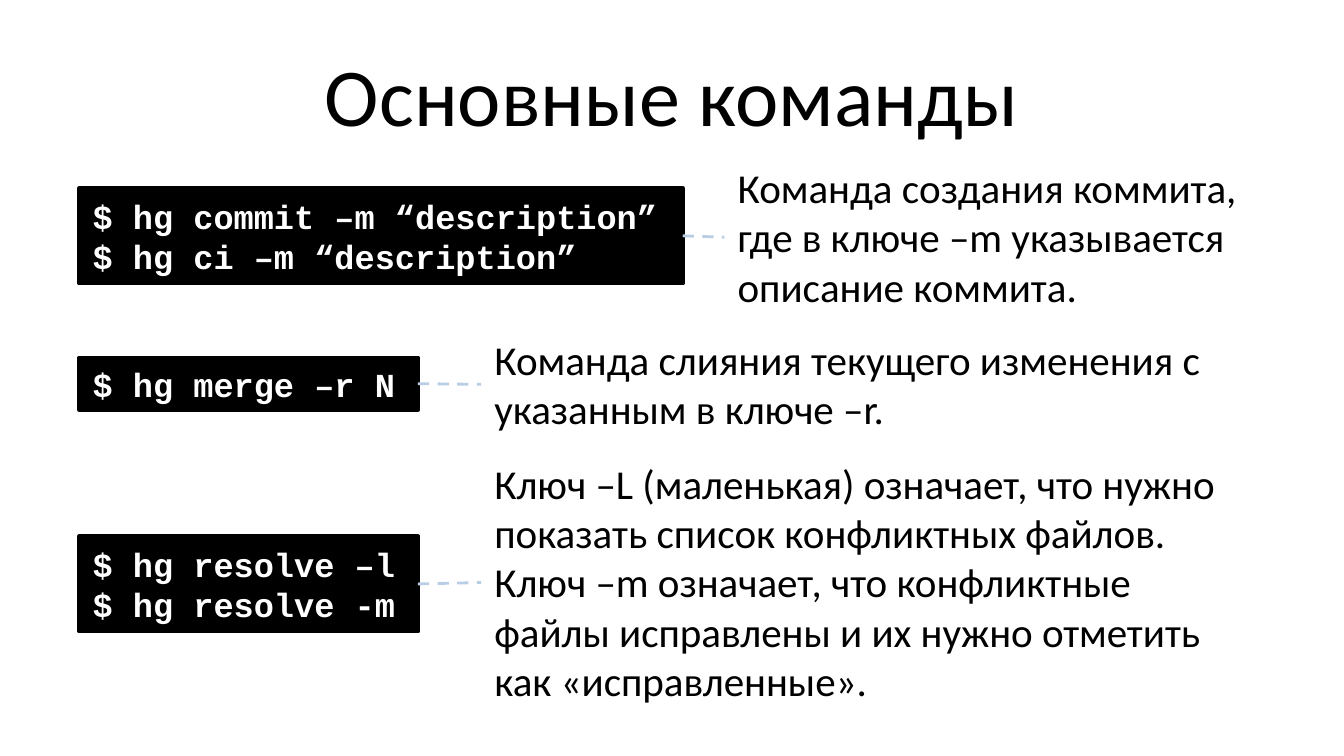
from lxml import etree
from pptx import Presentation
from pptx.dml.color import RGBColor
from pptx.enum.dml import MSO_LINE_DASH_STYLE as Dash
from pptx.enum.shapes import MSO_CONNECTOR as Connector, MSO_SHAPE as Shape
from pptx.enum.text import MSO_ANCHOR as Anchor, MSO_AUTO_SIZE as AutoSize, PP_ALIGN as Align
from pptx.oxml.ns import qn
from pptx.util import Inches, Pt

BLACK = RGBColor(0x00, 0x00, 0x00)
WHITE = RGBColor(0xFF, 0xFF, 0xFF)
PALE_BLUE = RGBColor(0xB9, 0xCD, 0xE5)
RIGHT_SIDE, LEFT_SIDE = 3, 1
PAGE_WIDTH = 10
PAGE_HEIGHT = PAGE_WIDTH * 9 / 16
CODE_LEFT = 0.59

# Code box (top, width, height), note box (left, top, width, height), texts
COMMANDS = [
    ((2.66, 2.52, 0.39), (3.58, 2.44, 5.95, 0.84),
     ["$ hg merge –r N"],
     ["Команда слияния текущего изменения с указанным в ключе –r."]),
    ((3.99, 2.52, 0.71), (3.58, 3.36, 5.59, 1.95),
     ["$ hg resolve –l", "$ hg resolve -m"],
     ["Ключ –L (маленькая) означает, что нужно показать список конфликтных файлов.",
      "Ключ –m означает, что конфликтные файлы исправлены и их нужно отметить "
      "как «исправленные»."]),
    ((1.4, 4.49, 0.71), (5.39, 1.16, 4.14, 1.21),
     ["$ hg commit –m “description”", "$ hg ci –m “description”"],
     ["Команда создания коммита, где в ключе –m указывается описание коммита."]),
]


def write_lines(shape, lines, font, size, color, bold=False,
                align=Align.LEFT, anchor=Anchor.TOP):
    frame = shape.text_frame
    frame.word_wrap = True
    frame.vertical_anchor = anchor
    for index, line in enumerate(lines):
        para = frame.add_paragraph() if index else frame.paragraphs[0]
        para.alignment = align
        span = para.add_run()
        span.text = line
        span.font.name = font
        span.font.size = Pt(size)
        span.font.bold = bold
        span.font.color.rgb = color


def add_text(page, box, lines, size, **style):
    text = page.shapes.add_textbox(*map(Inches, box))
    write_lines(text, lines, "Calibri", size, BLACK, **style)
    return text


def add_code(page, box, lines):
    code = page.shapes.add_shape(Shape.RECTANGLE, *map(Inches, box))
    code.shadow.inherit = False
    code.fill.solid()
    code.fill.fore_color.rgb = BLACK
    code.line.color.rgb = BLACK
    code.line.width = Pt(2)
    write_lines(code, lines, "Courier New", 18, WHITE, bold=True, anchor=Anchor.MIDDLE)
    return code


def add_link(page, code, note):
    link = page.shapes.add_connector(Connector.STRAIGHT, 0, 0, 0, 0)
    link.begin_connect(code, RIGHT_SIDE)
    link.end_connect(note, LEFT_SIDE)
    link.line.color.rgb = PALE_BLUE
    link.line.width = Pt(1.5)
    link.line.dash_style = Dash.DASH
    etree.SubElement(link._element.spPr, qn("a:effectLst"))


def add_command(page, code_box, note_box, code_lines, note_lines):
    """Place a terminal box, its explanation and the dashed link between them."""
    code = add_code(page, (CODE_LEFT, *code_box), code_lines)
    note = add_text(page, note_box, note_lines, 22)
    note.text_frame.auto_size = AutoSize.SHAPE_TO_FIT_TEXT
    add_link(page, code, note)


def main():
    deck = Presentation()
    deck.slide_width, deck.slide_height = Inches(PAGE_WIDTH), Inches(PAGE_HEIGHT)
    page = deck.slides.add_slide(deck.slide_layouts[6])
    add_text(page, (0.5, 0.23, 9, 0.94), ["Основные команды"], 44,
             align=Align.CENTER, anchor=Anchor.MIDDLE)
    for command in COMMANDS:
        add_command(page, *command)
    deck.save("out.pptx")


if __name__ == "__main__":
    main()
